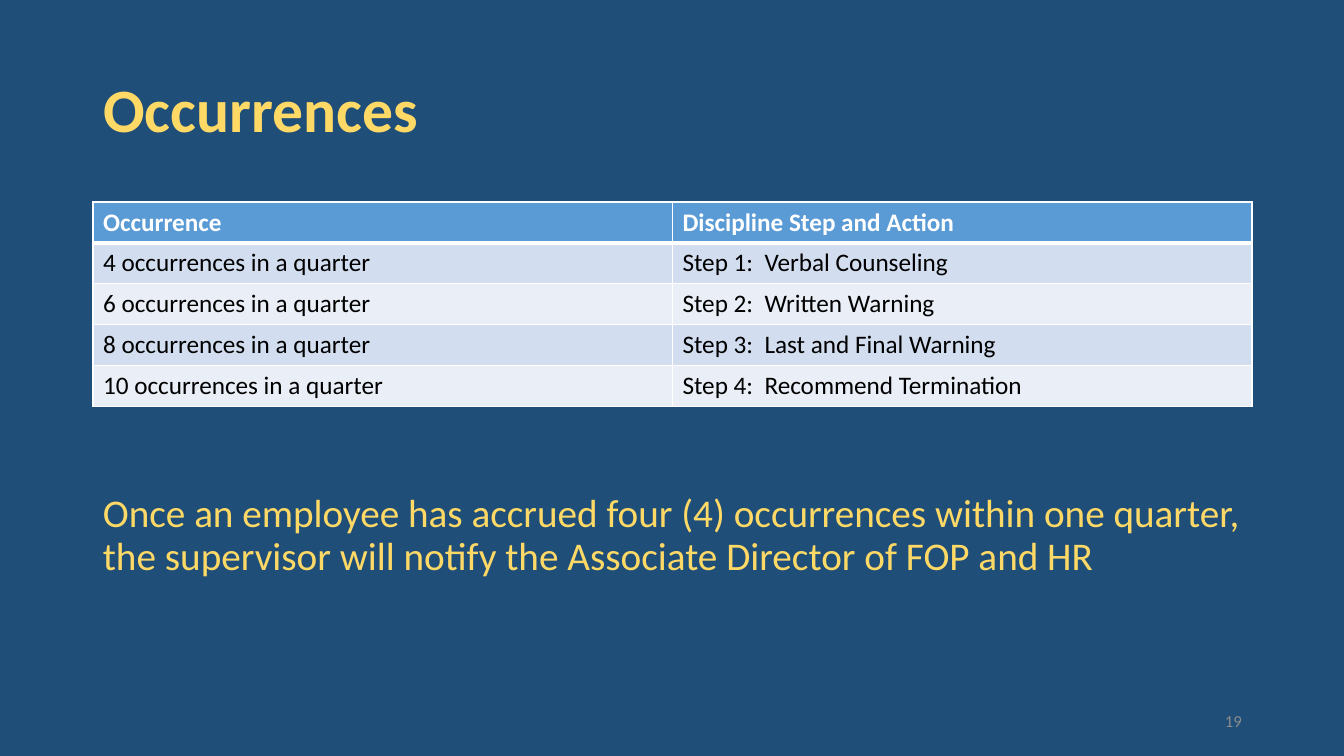
from lxml.etree import SubElement
from pptx import Presentation
from pptx.dml.color import RGBColor
from pptx.enum.text import MSO_ANCHOR as Anchor, MSO_AUTO_SIZE as Fit, PP_ALIGN as Align
from pptx.oxml.ns import qn
from pptx.util import Emu, Pt

NAVY = RGBColor(0x1F, 0x4E, 0x79)
GOLD = RGBColor(0xFF, 0xD9, 0x66)
BLUE = RGBColor(0x5B, 0x9B, 0xD5)
PALE = RGBColor(0xD2, 0xDE, 0xEF)
MIST = RGBColor(0xEA, 0xEF, 0xF7)
GRAY = RGBColor(0x8C, 0x8C, 0x8C)
WHITE = RGBColor(0xFF, 0xFF, 0xFF)
BLACK = RGBColor(0, 0, 0)
FONT = "Calibri"

ROWS = [
    ("Occurrence", "Discipline Step and Action"),
    ("4 occurrences in a quarter", "Step 1:  Verbal Counseling"),
    ("6 occurrences in a quarter", "Step 2:  Written Warning"),
    ("8 occurrences in a quarter", "Step 3:  Last and Final Warning"),
    ("10 occurrences in a quarter", "Step 4:  Recommend Termination"),
]
NOTICE = ("Once an employee has accrued four (4) occurrences within one quarter, "
          "the supervisor will notify the Associate Director of FOP and HR")


def px(count):
    """Turn pixels into EMU."""
    return Emu(round(count * 914400 / 100.8))


def write(frame, text, size=18, color=BLACK, bold=False, align=Align.LEFT,
          anchor=Anchor.TOP, spacing=None):
    """Put formatted text into a text frame."""
    frame.word_wrap = True
    frame.auto_size = Fit.NONE
    frame.vertical_anchor = anchor
    para = frame.paragraphs[0]
    para.alignment = align
    para.line_spacing = spacing
    run = para.add_run()
    run.text = text
    font = run.font
    font.name, font.size, font.bold = FONT, Pt(size), bold
    font.color.rgb = color


def border(cell, **widths):
    """Draw white cell borders, with widths in points by side."""
    for side in "LRTB":
        line = SubElement(cell._tc.get_or_add_tcPr(), qn(f"a:ln{side}"),
                          w=str(Pt(widths.get(side, 1))))
        fill = SubElement(line, qn("a:solidFill"))
        SubElement(fill, qn("a:srgbClr"), val=str(WHITE))


def head(slide, box):
    """Place the title in its box."""
    title = slide.shapes.title
    title.left, title.top, title.width, title.height = map(px, box)
    write(title.text_frame, "Occurrences", size=44, color=GOLD, bold=True,
          anchor=Anchor.MIDDLE, spacing=0.9)


def steps(slide, box):
    """Fill the box with the table of discipline steps."""
    wide, high = box[2:]
    table = slide.shapes.add_table(len(ROWS), 2, *map(px, box)).table
    for col in table.columns:
        col.width = px(wide / 2)
    for r, texts in enumerate(ROWS):
        table.rows[r].height = px(high / len(ROWS))
        top = r == 0
        for c, text in enumerate(texts):
            cell = table.cell(r, c)
            border(cell, T=3 if r == 1 else 1, B=3 if top else 1)
            cell.fill.solid()
            cell.fill.fore_color.rgb = BLUE if top else PALE if r % 2 else MIST
            para = cell.text_frame.paragraphs[0]
            run = para.add_run()
            run.text = text
            run.font.name, run.font.size, run.font.bold = FONT, Pt(18), top
            run.font.color.rgb = WHITE if top else BLACK


def label(slide, box, text, **style):
    """Place a text box with the given style."""
    write(slide.shapes.add_textbox(*map(px, box)).text_frame, text, **style)


def main():
    """Build and save the slide."""
    deck = Presentation()
    deck.slide_width, deck.slide_height = px(1344), px(756)
    slide = deck.slides.add_slide(deck.slide_layouts[5])
    back = slide.background.fill
    back.solid()
    back.fore_color.rgb = NAVY
    left, wide = 93, 1159
    head(slide, (left, 40, wide, 146))
    label(slide, (left, 489, wide, 192), NOTICE, size=28, color=GOLD, spacing=0.9)
    label(slide, (950, 701, 302, 40), "19", size=12, color=GRAY,
          align=Align.RIGHT, anchor=Anchor.MIDDLE)
    steps(slide, (left, 202, wide, 204))
    deck.save("out.pptx")


if __name__ == "__main__":
    main()
